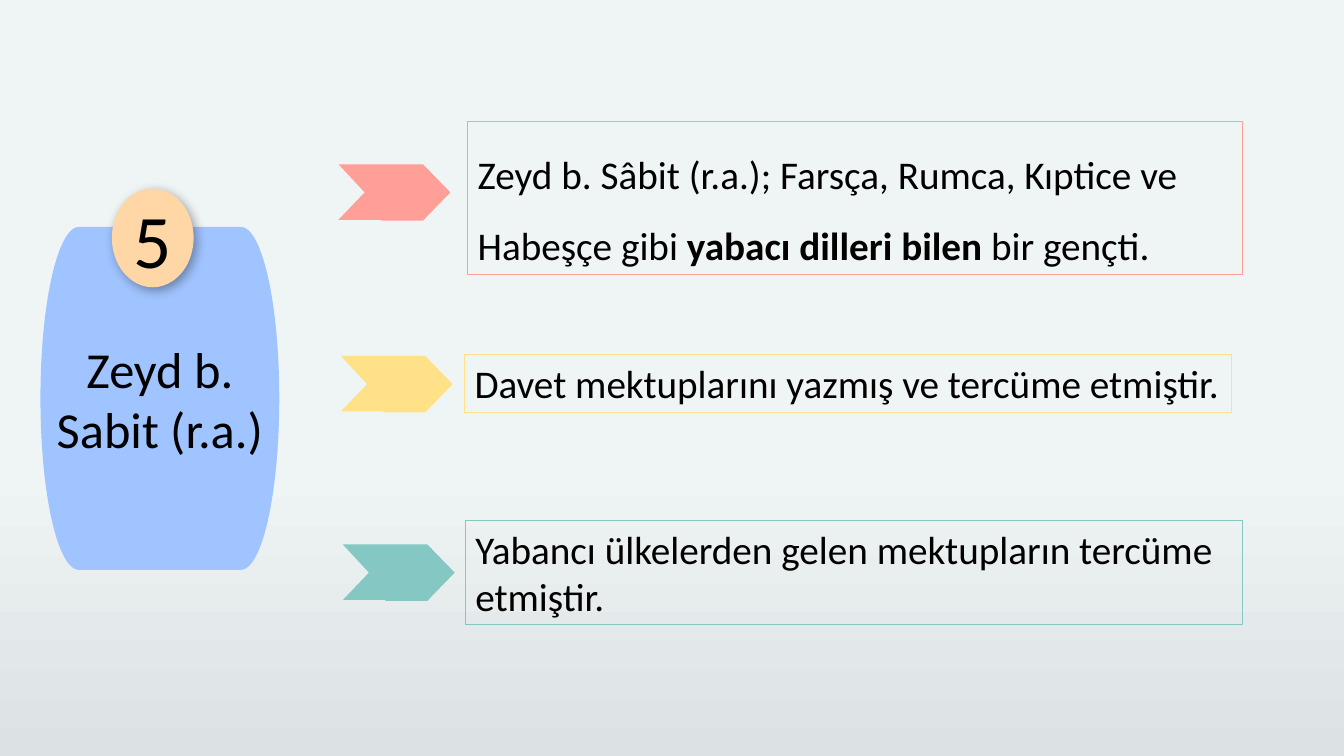
import pptx
import pptx.dml.color
import pptx.enum.shapes
import pptx.enum.text
import pptx.oxml
import pptx.oxml.ns
import pptx.util
from pptx.util import Cm

SHAPES = pptx.enum.shapes.MSO_SHAPE
ALIGN = pptx.enum.text.PP_ALIGN
ANCHOR = pptx.enum.text.MSO_ANCHOR
FIT = pptx.enum.text.MSO_AUTO_SIZE

CHEVRON = [(0, 0), (2.13, 0), (2.82, 0.71), (2.13, 1.42),
           (1.07, 1.42), (1.07, 1.4), (0, 1.4), (0.66, 0.71)]

# Colour, chevron corner, box bounds, box wraps, line spacing, runs (text, bold)
POINTS = [
    ("FF9F98", (8.53, 4.14), (11.79, 3.07, 19.53, 3.84), True, 1.5,
     [("Zeyd b. Sâbit (r.a.); Farsça, Rumca, Kıptice ve Habeşçe gibi ", False),
      ("yabacı dilleri bilen ", True),
      ("bir gençti.", False)]),
    ("FFE188", (8.59, 8.97), (11.71, 8.94, 19.33, 1.45), False, 1.0,
     [("Davet mektuplarını yazmış ve tercüme etmiştir.", False)]),
    ("84C7C3", (8.64, 13.72), (11.73, 13.11, 19.58, 2.64), True, 1.0,
     [("Yabancı ülkelerden gelen mektupların tercüme etmiştir.", False)]),
]


def colour(value):
    return pptx.dml.color.RGBColor.from_string(value)


def set_values(target, values):
    for name, value in values.items():
        setattr(target, name, value)


def paint(shape, fill):
    shape.shadow.inherit = False
    shape.fill.solid()
    shape.fill.fore_color.rgb = colour(fill)
    shape.line.fill.background()


def write(shape, runs, size, frame_format, para_format):
    set_values(shape.text_frame, frame_format)
    para = shape.text_frame.paragraphs[0]
    set_values(para, para_format)
    for text, bold in runs:
        span = para.add_run()
        span.text = text
        set_values(span.font, {"name": "Calibri", "size": pptx.util.Pt(size), "bold": bold})
        span.font.color.rgb = colour("000000")


def paint_background(page):
    fill = page.background.fill
    fill.gradient()
    fill.gradient_angle = 270
    for stop, position, value in zip(fill.gradient_stops, (0.62, 1), ("EFF4F5", "DCE1E4")):
        stop.position = position
        stop.color.rgb = colour(value)


def add_label(page, kind, bounds, fill, text, size, wrap):
    """Add a filled preset shape with centred text and no margins."""
    label = page.shapes.add_shape(kind, *map(Cm, bounds))
    paint(label, fill)
    frame_format = {"word_wrap": wrap, "vertical_anchor": ANCHOR.MIDDLE,
                    "margin_left": 0, "margin_right": 0, "margin_top": 0, "margin_bottom": 0}
    write(label, [(text, False)], size, frame_format, {"alignment": ALIGN.CENTER})
    return label


def add_soft_shadow(shape):
    effects = shape._element.spPr.find(pptx.oxml.ns.qn("a:effectLst"))
    effects.append(pptx.oxml.parse_xml(
        f'<a:outerShdw {pptx.oxml.ns.nsdecls("a")} blurRad="{pptx.util.Pt(8)}" '
        f'dist="{pptx.util.Pt(3)}" dir="2700000" algn="tl" rotWithShape="0">'
        '<a:srgbClr val="000000"><a:alpha val="34000"/></a:srgbClr></a:outerShdw>'))


def add_chevron(page, left, top, fill):
    corners = [(Cm(left + x), Cm(top + y)) for x, y in CHEVRON]
    builder = page.shapes.build_freeform(*corners[0])
    builder.add_line_segments(corners[1:], close=True)
    paint(builder.convert_to_shape(), fill)


def add_outlined_text(page, bounds, line, wrap, spacing, runs):
    box = page.shapes.add_textbox(*map(Cm, bounds))
    box.line.color.rgb = colour(line)
    box.line.width = pptx.util.Pt(0.75)
    write(box, runs, 28, {"word_wrap": wrap, "auto_size": FIT.SHAPE_TO_FIT_TEXT},
          {"line_spacing": spacing})


def main():
    deck = pptx.Presentation()
    set_values(deck, {"slide_width": Cm(33.87), "slide_height": Cm(19.05)})
    page = deck.slides.add_slide(deck.slide_layouts[6])
    paint_background(page)
    add_label(page, SHAPES.FLOWCHART_TERMINATOR, (1.02, 5.72, 6.02, 8.64),
              "A0C4FF", "Zeyd b. Sabit (r.a.)", 36, True)
    number = add_label(page, SHAPES.OVAL, (2.82, 4.75, 2.06, 2.49), "FFD6A5", "5", 54, False)
    add_soft_shadow(number)
    for value, corner, bounds, wrap, spacing, runs in POINTS:
        add_chevron(page, *corner, value)
        add_outlined_text(page, bounds, value, wrap, spacing, runs)
    deck.save("out.pptx")


if __name__ == "__main__":
    main()
